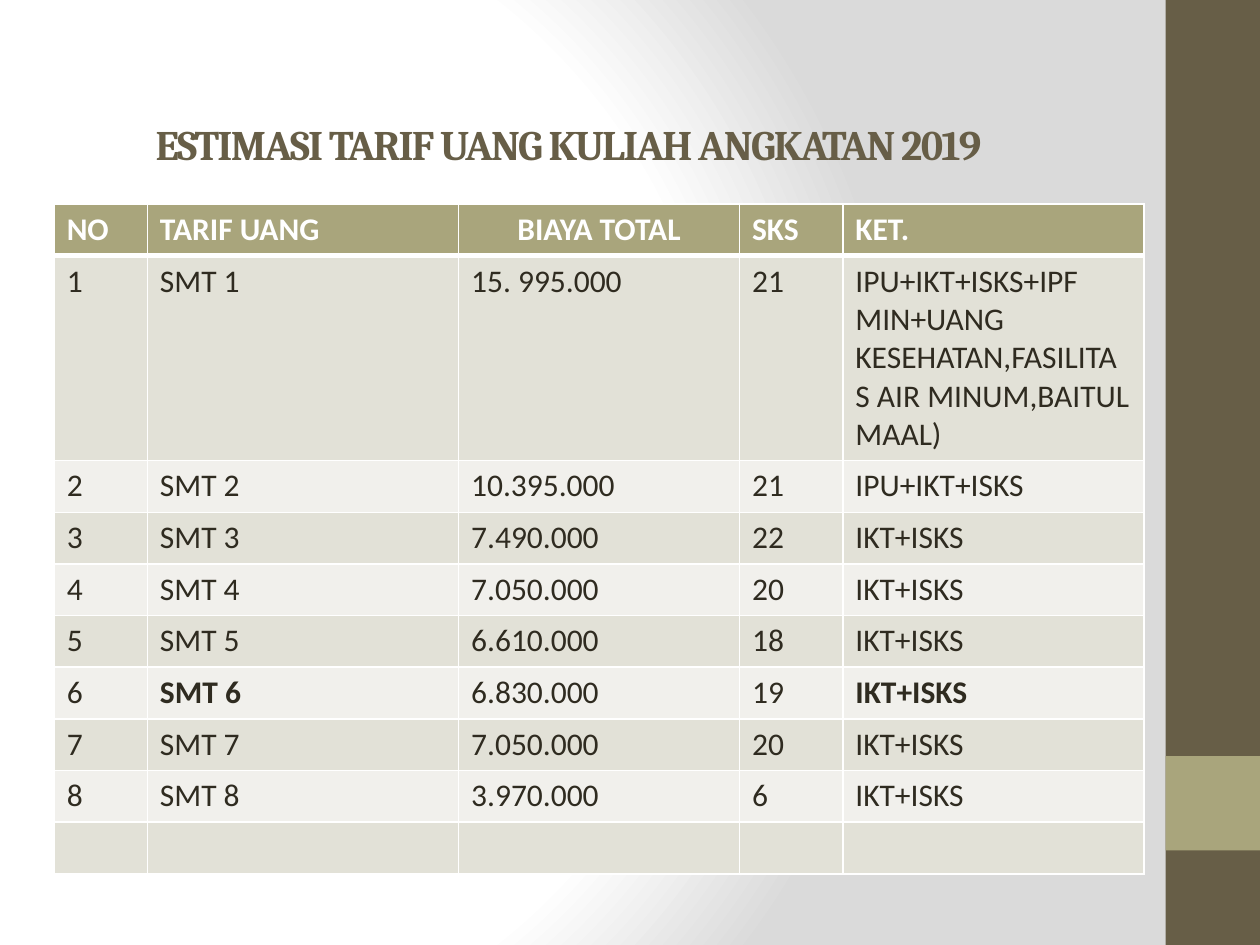
from dataclasses import dataclass

from lxml import etree
from pptx import Presentation
from pptx.dml.color import RGBColor
from pptx.enum.shapes import MSO_SHAPE
from pptx.enum.text import MSO_ANCHOR, PP_ALIGN
from pptx.oxml import parse_xml
from pptx.oxml.ns import nsdecls, qn
from pptx.util import Inches, Pt

RECT = MSO_SHAPE.RECTANGLE
TOP = MSO_ANCHOR.TOP
LEFT, CENTER = PP_ALIGN.LEFT, PP_ALIGN.CENTER


@dataclass(frozen=True)
class Theme:
    brown: str = "675E47"
    olive: str = "A9A57C"
    ink: str = "2F2B20"
    white: str = "FFFFFF"
    grey: str = "DADADA"
    bands: tuple = ("E2E1D7", "F1F0EC")
    title_font: str = "Cambria"
    body_font: str = "Calibri"
    title_size: int = 24
    body_size: int = 18


THEME = Theme()

HEADER = ("NO", "TARIF UANG", "BIAYA TOTAL", "SKS", "KET.")
FIRST_NOTE = "IPU+IKT+ISKS+IPF MIN+UANG KESEHATAN,FASILITAS AIR MINUM,BAITUL MAAL)"
# Total cost, credits and note for each semester
SEMESTERS = [
    ("15. 995.000", "21", FIRST_NOTE),
    ("10.395.000", "21", "IPU+IKT+ISKS"),
    ("7.490.000", "22", "IKT+ISKS"),
    ("7.050.000", "20", "IKT+ISKS"),
    ("6.610.000", "18", "IKT+ISKS"),
    ("6.830.000", "19", "IKT+ISKS"),
    ("7.050.000", "20", "IKT+ISKS"),
    ("3.970.000", "6", "IKT+ISKS"),
]
COLUMN_WIDTHS = (0.74, 2.47, 2.23, 0.82, 2.39)
ROW_HEIGHT = 0.41
BOLD_CELLS = {(6, 1), (6, 4)}


def style_paragraph(p, font, size, color, bold, align=LEFT):
    p.alignment = align
    for r in p.runs:
        r.font.name = font
        r.font.size = Pt(size)
        r.font.bold = bold
        r.font.color.rgb = RGBColor.from_string(color)


def set_background(slide):
    """Fill the slide with a radial gradient from white to grey."""
    stops = "".join(
        f'<a:gs pos="{pos * 1000}"><a:srgbClr val="{color}"/></a:gs>'
        for pos, color in ((0, THEME.white), (75, THEME.white), (100, THEME.grey))
    )
    bg = parse_xml(
        f'<p:bg {nsdecls("p", "a")}><p:bgPr><a:gradFill rotWithShape="1">'
        f'<a:gsLst>{stops}</a:gsLst><a:path path="circle">'
        '<a:fillToRect l="20000" t="50000" r="100000" b="50000"/></a:path>'
        "</a:gradFill><a:effectLst/></p:bgPr></p:bg>"
    )
    slide.element.find(qn("p:cSld")).insert(0, bg)


def add_block(slide, left, top, width, height, color):
    sp = slide.shapes.add_shape(RECT, left, top, width, height)
    sp.shadow.inherit = False
    sp.fill.solid()
    sp.fill.fore_color.rgb = RGBColor.from_string(color)
    sp.line.fill.background()


def add_sidebar(slide, left, top, width, height):
    """Add the full-height band with a square accent near its foot."""
    add_block(slide, left, top, width, height, THEME.brown)
    add_block(slide, left, top + height - 2 * width, width, width, THEME.olive)


def add_title(slide, left, top, width, height, text):
    tf = slide.shapes.add_textbox(left, top, width, height).text_frame
    tf.word_wrap = True
    tf.vertical_anchor = TOP
    tf.margin_top = Inches(0.1)
    tf.text = text
    p = tf.paragraphs[0]
    style_paragraph(p, THEME.title_font, THEME.title_size, THEME.brown, True, CENTER)
    for r in p.runs:
        r.font._element.set("spc", "-100")


def set_borders(cell, top, bottom):
    """Draw white borders; top and bottom are widths in points."""
    tc_pr = cell._tc.get_or_add_tcPr()
    for side, width in (("L", 1), ("R", 1), ("T", top), ("B", bottom)):
        ln = etree.SubElement(tc_pr, qn(f"a:ln{side}"), w=str(Pt(width)))
        fill = etree.SubElement(ln, qn("a:solidFill"))
        etree.SubElement(fill, qn("a:srgbClr"), val=THEME.white)


def add_fee_table(slide, left, top, width, height):
    rows = [HEADER]
    rows += [(str(n), f"SMT {n}", *fees) for n, fees in enumerate(SEMESTERS, 1)]
    rows.append(("",) * len(HEADER))

    frame = slide.shapes.add_table(len(rows), len(HEADER), left, top, width, height)
    table = frame.table
    for column, inches in zip(table.columns, COLUMN_WIDTHS):
        column.width = Inches(inches)
    for row in table.rows:
        row.height = Inches(ROW_HEIGHT)
    frame.height = height

    for i, values in enumerate(rows):
        is_header = i == 0
        fill = THEME.olive if is_header else THEME.bands[(i - 1) % 2]
        color = THEME.white if is_header else THEME.ink
        for j, value in enumerate(values):
            cell = table.cell(i, j)
            set_borders(cell, 3 if i == 1 else 1, 3 if is_header else 1)
            cell.fill.solid()
            cell.fill.fore_color.rgb = RGBColor.from_string(fill)
            cell.text = value
            style_paragraph(
                cell.text_frame.paragraphs[0], THEME.body_font, THEME.body_size,
                color, is_header or (i, j) in BOLD_CELLS,
                CENTER if is_header and j == 2 else LEFT,
            )


def main():
    prs = Presentation()
    prs.slide_width, prs.slide_height = Inches(10), Inches(7.5)
    slide = prs.slides.add_slide(prs.slide_layouts[6])
    set_background(slide)
    add_sidebar(slide, Inches(9.25), 0, Inches(0.75), prs.slide_height)
    add_fee_table(slide, Inches(0.43), Inches(1.62), Inches(8.66), Inches(5.25))
    add_title(slide, 0, Inches(0.84), Inches(9.02), Inches(0.97),
              "ESTIMASI TARIF UANG KULIAH ANGKATAN 2019")
    prs.save("out.pptx")


if __name__ == "__main__":
    main()
